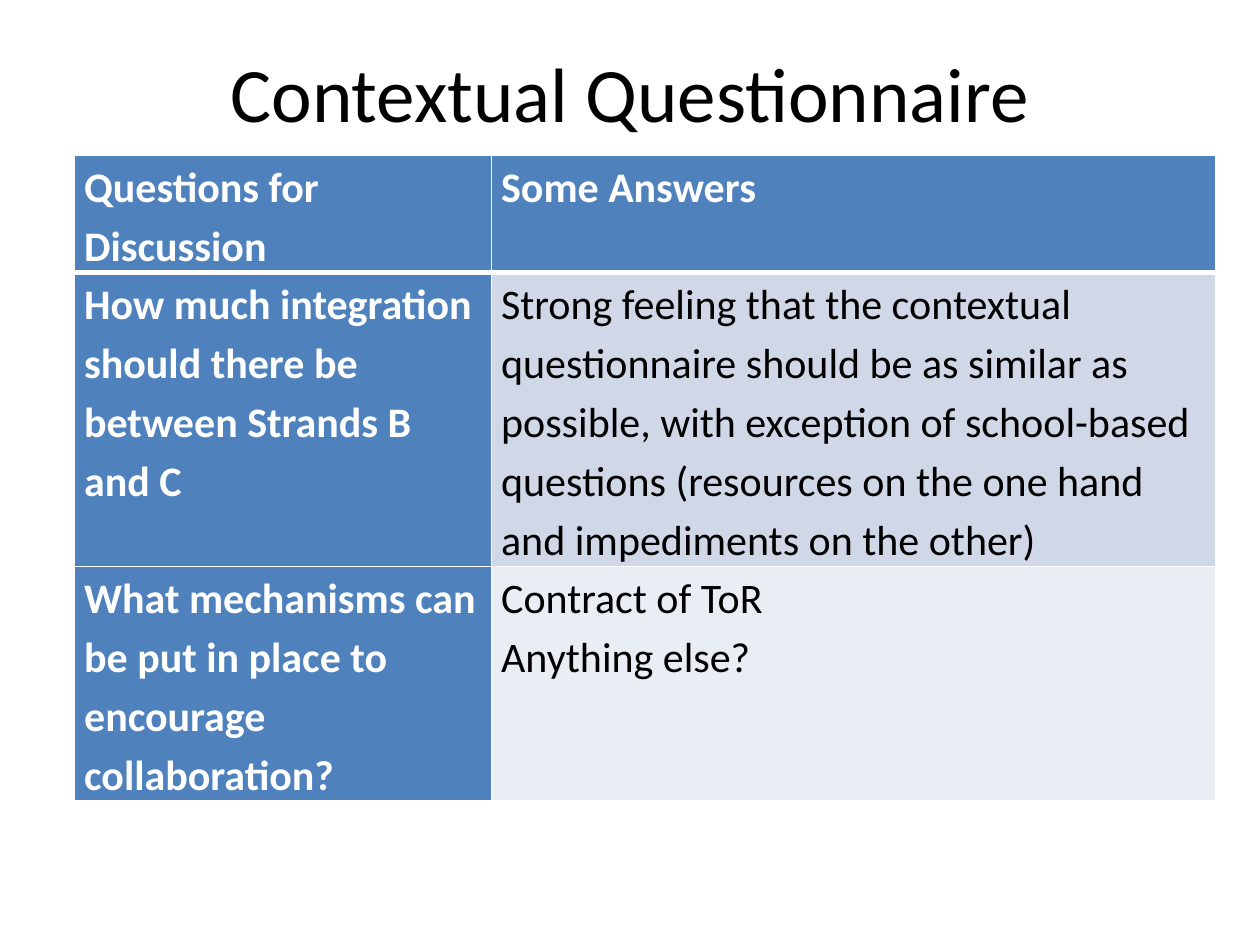
"""Build a slide with a title and a table of discussion questions and answers."""
from lxml.etree import SubElement
from pptx import Presentation
from pptx.dml.color import RGBColor
from pptx.enum.text import MSO_ANCHOR as Anchor, PP_ALIGN as Align
from pptx.oxml.ns import qn
from pptx.util import Pt

TITLE = "Contextual Questionnaire"
ROWS = [
    (["Questions for Discussion"], ["Some Answers"]),
    (
        ["How much integration should there be between Strands B and C"],
        ["Strong feeling that the contextual questionnaire should be as similar as possible, "
         "with exception of school-based questions (resources on the one hand and "
         "impediments on the other)"],
    ),
    (
        ["What mechanisms can be put in place to encourage collaboration?"],
        ["Contract of ToR", "Anything else?"],
    ),
]
THEME = {
    "font": "Calibri",
    "title_size": 44,
    "table_size": 24,
    "dark": "000000",
    "light": "FFFFFF",
    "accent": "4F81BD",
    "bands": ["D0D8E8", "E9EDF4"],
}
SLIDE_SIZE = (720, 540)
TITLE_BOX = (36, 21.6, 648, 61.2)
TABLE_ORIGIN = (42.7, 88.6)
COLUMN_WIDTHS = (238.3, 414)
ROW_HEIGHTS = (67, 168, 134)
SIDE_MARGIN = 5.4
LINE_SPACING = 1.15
THIN, THICK = 1, 3


def set_values(target, values):
    for name, value in values.items():
        setattr(target, name, value)


def write_text(frame, lines, color, font_format, paragraph_format):
    for index, line in enumerate(lines):
        paragraph = frame.paragraphs[0] if index == 0 else frame.add_paragraph()
        set_values(paragraph, paragraph_format)
        run = paragraph.add_run()
        run.text = line
        set_values(run.font, {"name": THEME["font"], **font_format})
        run.font.color.rgb = RGBColor.from_string(color)


def add_borders(cell, widths):
    properties = cell._tc.get_or_add_tcPr()
    for side, width in widths.items():
        line = SubElement(properties, qn(f"a:ln{side}"), w=str(Pt(width)))
        fill = SubElement(line, qn("a:solidFill"))
        SubElement(fill, qn("a:srgbClr"), val=THEME["light"])


def add_title(slide):
    shape = slide.shapes.add_textbox(*map(Pt, TITLE_BOX))
    frame = shape.text_frame
    set_values(frame, {"word_wrap": True, "vertical_anchor": Anchor.MIDDLE})
    write_text(frame, [TITLE], THEME["dark"], {"size": Pt(THEME["title_size"])},
               {"alignment": Align.CENTER})


def fill_cell(cell, lines, row, column):
    is_heading = row == 0 or column == 0
    set_values(cell, {
        "margin_left": Pt(SIDE_MARGIN), "margin_right": Pt(SIDE_MARGIN),
        "margin_top": 0, "margin_bottom": 0, "vertical_anchor": Anchor.TOP,
    })
    add_borders(cell, {
        "L": THIN, "R": THIN,
        "T": THICK if row == 1 else THIN,
        "B": THICK if row == 0 else THIN,
    })
    background = THEME["accent"] if is_heading else THEME["bands"][(row - 1) % 2]
    cell.fill.solid()
    cell.fill.fore_color.rgb = RGBColor.from_string(background)
    write_text(cell.text_frame, lines, THEME["light" if is_heading else "dark"],
               {"size": Pt(THEME["table_size"]), "bold": is_heading},
               {"line_spacing": LINE_SPACING})


def add_question_table(slide):
    size = (sum(COLUMN_WIDTHS), sum(ROW_HEIGHTS))
    frame = slide.shapes.add_table(len(ROWS), len(COLUMN_WIDTHS),
                                   *map(Pt, TABLE_ORIGIN + size))
    table = frame.table
    for column, width in zip(table.columns, COLUMN_WIDTHS):
        column.width = Pt(width)
    for row, height in zip(table.rows, ROW_HEIGHTS):
        row.height = Pt(height)
    for row, cells in enumerate(ROWS):
        for column, lines in enumerate(cells):
            fill_cell(table.cell(row, column), lines, row, column)


def main():
    presentation = Presentation()
    presentation.slide_width, presentation.slide_height = map(Pt, SLIDE_SIZE)
    slide = presentation.slides.add_slide(presentation.slide_layouts[6])
    add_title(slide)
    add_question_table(slide)
    presentation.save("out.pptx")


if __name__ == "__main__":
    main()
